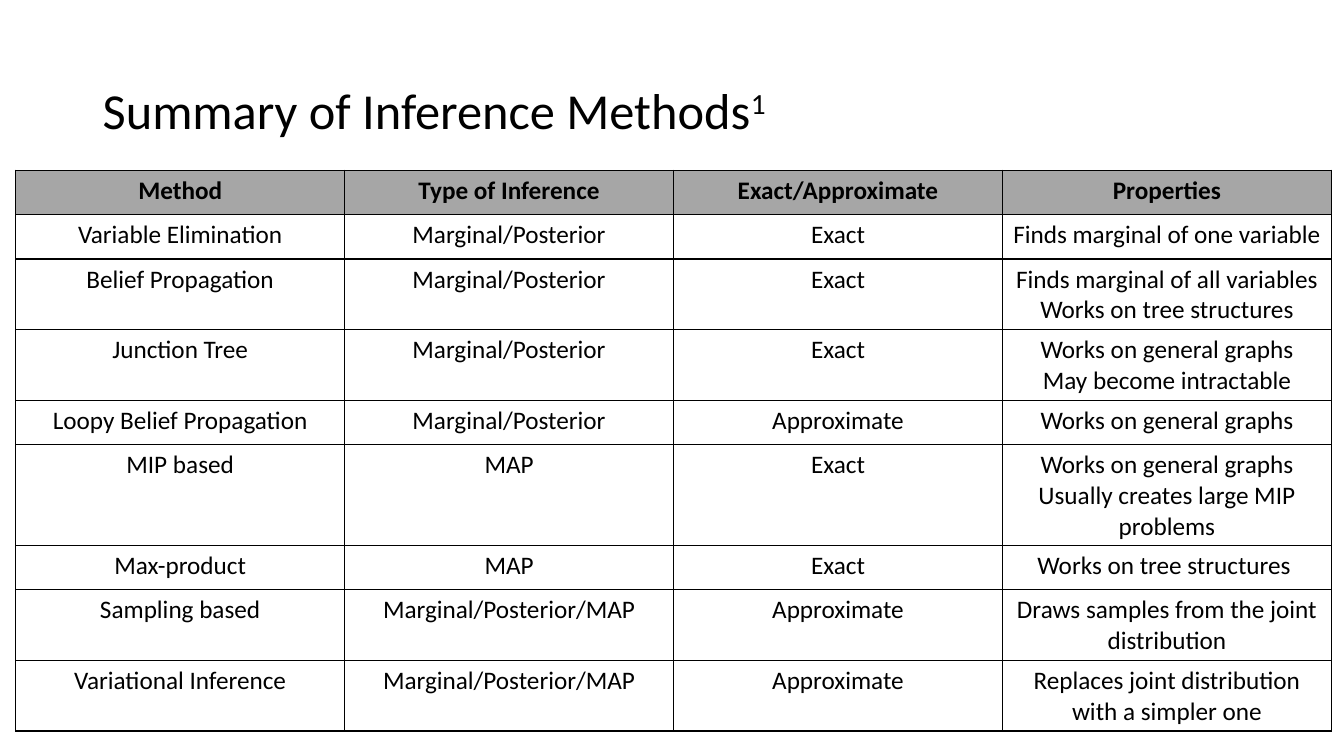
import pptx
import pptx.dml.color
import pptx.enum.text
import pptx.oxml
import pptx.oxml.ns
import pptx.util

SUMMARY = [
    ("Method", "Type of Inference", "Exact/Approximate", "Properties"),
    ("Variable Elimination", "Marginal/Posterior", "Exact", "Finds marginal of one variable"),
    ("Belief Propagation", "Marginal/Posterior", "Exact",
     "Finds marginal of all variables\nWorks on tree structures"),
    ("Junction Tree", "Marginal/Posterior", "Exact",
     "Works on general graphs\nMay become intractable"),
    ("Loopy Belief Propagation", "Marginal/Posterior", "Approximate", "Works on general graphs"),
    ("MIP based", "MAP", "Exact",
     "Works on general graphs\nUsually creates large MIP problems"),
    ("Max-product", "MAP", "Exact", "Works on tree structures "),
    ("Sampling based", "Marginal/Posterior/MAP", "Approximate",
     "Draws samples from the joint distribution"),
    ("Variational Inference", "Marginal/Posterior/MAP", "Approximate",
     "Replaces joint distribution with a simpler one"),
]


def colour(value):
    return pptx.dml.color.RGBColor.from_string(value)


def apply(target, values):
    for name, value in values.items():
        setattr(target, name, value)


class SlideBuilder:
    ink = "000000"
    header_fill = "A6A6A6"
    border_width = pptx.util.Pt(1)

    def __init__(self, deck):
        self.width, self.height = deck.slide_width, deck.slide_height
        self.slide = deck.slides.add_slide(deck.slide_layouts[6])

    def place(self, left, top, width, height):
        return (round(left * self.width / 100), round(top * self.height / 100),
                round(width * self.width / 100), round(height * self.height / 100))

    def style(self, font, size, bold=False):
        apply(font, {"name": "Calibri", "size": pptx.util.Pt(size), "bold": bold})
        font.color.rgb = colour(self.ink)

    def title(self, wording, footnote, area):
        frame = self.slide.shapes.add_textbox(*self.place(*area)).text_frame
        apply(frame, {"word_wrap": True,
                      "vertical_anchor": pptx.enum.text.MSO_ANCHOR.MIDDLE})
        heading = frame.paragraphs[0]
        heading.line_spacing = 0.9
        for part, baseline in ((wording, 0), (footnote, 30000)):
            run = heading.add_run()
            run.text = part
            self.style(run.font, 36)
            if baseline:
                run._r.get_or_add_rPr().set("baseline", str(baseline))

    def border(self, cell):
        properties = cell._tc.get_or_add_tcPr()
        for position, side in enumerate(("lnL", "lnR", "lnT", "lnB")):
            edge = pptx.oxml.parse_xml(
                f'<a:{side} {pptx.oxml.ns.nsdecls("a")} w="{self.border_width}">'
                f'<a:solidFill><a:srgbClr val="{self.ink}"/></a:solidFill></a:{side}>')
            properties.insert(position, edge)

    def cell(self, cell, wording, is_header):
        cell.text = wording
        if is_header:
            cell.fill.solid()
            cell.fill.fore_color.rgb = colour(self.header_fill)
        else:
            cell.fill.background()
        self.border(cell)
        for paragraph in cell.text_frame.paragraphs:
            paragraph.alignment = pptx.enum.text.PP_ALIGN.CENTER
            for run in paragraph.runs:
                self.style(run.font, 18, is_header)

    def table(self, rows, left, top, width, row_height):
        area = self.place(left, top, width, row_height * len(rows))
        grid = self.slide.shapes.add_table(len(rows), len(rows[0]), *area).table
        apply(grid, {"first_row": True, "horz_banding": False})
        for row_index, row in enumerate(rows):
            for column_index, wording in enumerate(row):
                self.cell(grid.cell(row_index, column_index), wording, row_index == 0)


def main():
    deck = pptx.Presentation()
    apply(deck, {"slide_width": pptx.util.Inches(13.33),
                 "slide_height": pptx.util.Inches(7.5)})
    builder = SlideBuilder(deck)
    builder.title("Summary of Inference Methods", "1", (6.9, 5.33, 86.27, 19.33))
    builder.table(SUMMARY, left=1.17, top=22.53, width=97.9, row_height=5.87)
    deck.save("out.pptx")


if __name__ == "__main__":
    main()
